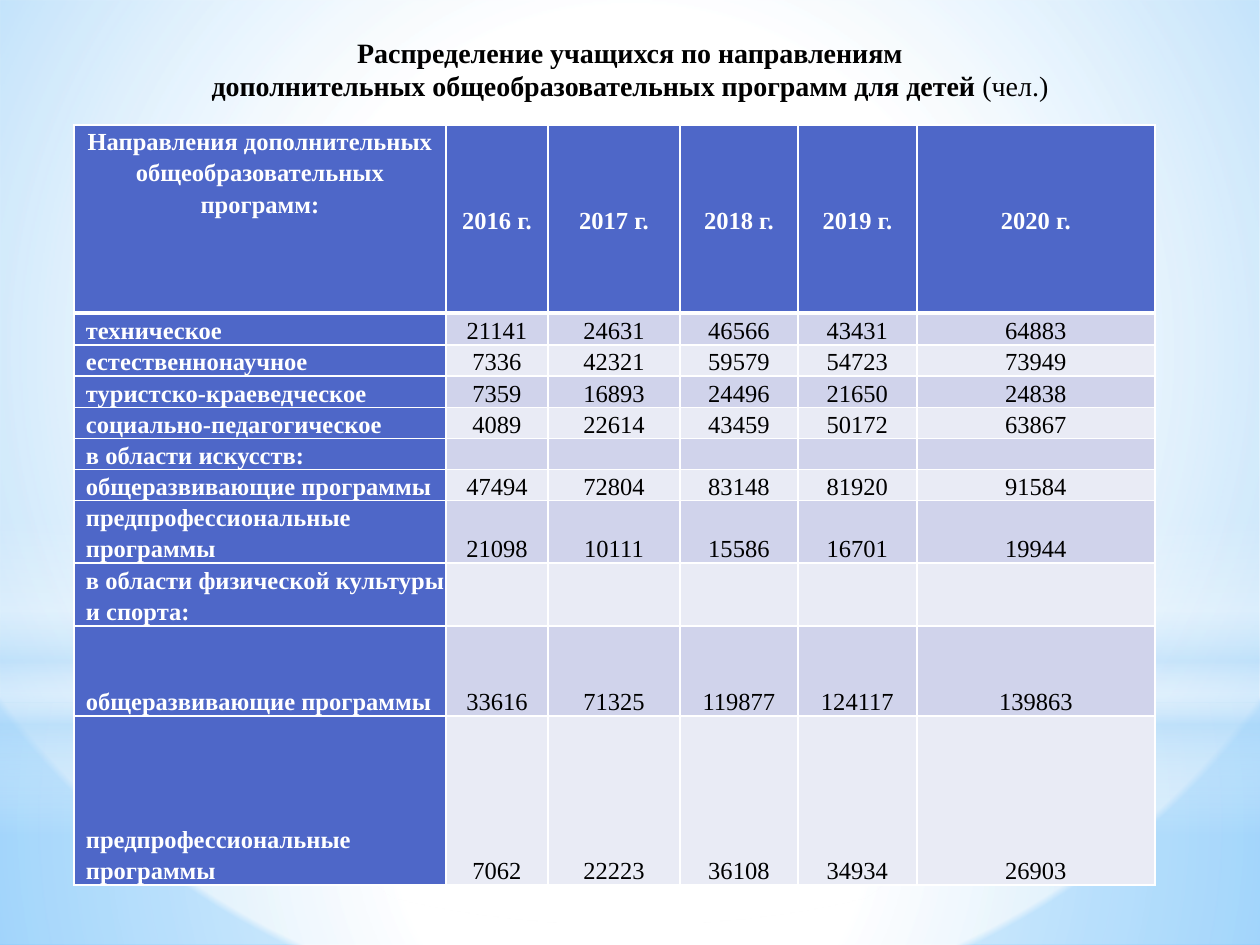
"""Builds a slide with a table of pupils by field of supplementary education."""
from dataclasses import dataclass
from typing import NamedTuple

from lxml import etree
from pptx import Presentation
from pptx import util as u
from pptx.dml.color import RGBColor
from pptx.enum import shapes, text
from pptx.oxml import ns

EMU_PER_PX = 914400 / 126


@dataclass(frozen=True)
class Theme:
    font: str = "Times New Roman"
    title_pt: int = 16
    table_pt: int = 14
    line_spacing: float = 1.15
    ink: str = "000000"
    white: str = "FFFFFF"
    accent: str = "4E67C8"
    bands: tuple[str, str] = ("D0D3EB", "E9EBF5")
    sky: str = "B4DCFA"
    deep_sky: str = "5BB9FF"


class Box(NamedTuple):
    left: int
    top: int
    width: int
    height: int


class Stop(NamedTuple):
    position: int
    color: str
    opacity: int = 100


class Gradient(NamedTuple):
    stops: list[Stop]
    focus: tuple[int, int, int, int] | None = (50, 50, 50, 50)


class Glow(NamedTuple):
    box: Box
    outline: shapes.MSO_SHAPE
    gradient: Gradient


class Program(NamedTuple):
    label: str
    height: int
    pupils: tuple[int, ...] = ()


THEME = Theme()
W, S = THEME.white, THEME.sky
RECT, OVAL = shapes.MSO_SHAPE.RECTANGLE, shapes.MSO_SHAPE.OVAL

BACKGROUND = Gradient([Stop(0, W), Stop(99, W), Stop(100, THEME.deep_sky)], (20, 10, 20, 60))
GLOWS = [
    Glow(Box(0, 703, 1260, 242), RECT, Gradient([Stop(0, W, 91), Stop(37, W, 76), Stop(100, S, 79)])),
    Glow(Box(0, 0, 1260, 703), RECT, Gradient([Stop(0, W, 89), Stop(48, W, 62), Stop(100, S, 79)])),
    Glow(Box(0, 519, 1260, 315), RECT, Gradient([
        Stop(0, W, 0), Stop(29, W, 30), Stop(45, S, 40),
        Stop(55, W, 26), Stop(65, S, 60), Stop(100, W, 0)], None)),
    Glow(Box(0, 220, 1260, 703), OVAL, Gradient([Stop(0, W), Stop(56, W, 0)])),
]

TITLE_BOX = Box(15, 29, 1230, 84)
TITLE = [
    [("Распределение учащихся по направлениям", True)],
    [("дополнительных общеобразовательных программ для детей ", True), ("(чел.)", False)],
]

TABLE_ORIGIN = (74, 125)
COLUMN_WIDTHS = [372, 102, 132, 118, 119, 238]
HEADER_HEIGHT = 188
LABEL_INDENT = 12
HEADER = ["Направления дополнительных общеобразовательных программ:",
          *(f"{year} г." for year in range(2016, 2021))]
PROGRAMS = [
    Program("техническое", 32, (21141, 24631, 46566, 43431, 64883)),
    Program("естественнонаучное", 31, (7336, 42321, 59579, 54723, 73949)),
    Program("туристско-краеведческое", 31, (7359, 16893, 24496, 21650, 24838)),
    Program("социально-педагогическое", 31, (4089, 22614, 43459, 50172, 63867)),
    Program("в области искусств:", 31),
    Program("общеразвивающие программы", 31, (47494, 72804, 83148, 81920, 91584)),
    Program("предпрофессиональные программы", 62, (21098, 10111, 15586, 16701, 19944)),
    Program("в области физической культуры и спорта:", 63),
    Program("общеразвивающие программы", 90, (33616, 71325, 119877, 124117, 139863)),
    Program("предпрофессиональные программы", 169, (7062, 22223, 36108, 34934, 26903)),
]


def px(length: int) -> u.Emu:
    return u.Emu(round(length * EMU_PER_PX))


def set_gradient(fill, element, gradient: Gradient) -> None:
    fill.gradient()
    node = element.find(".//" + ns.qn("a:gradFill"))
    for child in list(node):
        node.remove(child)
    stop_list = etree.SubElement(node, ns.qn("a:gsLst"))
    for stop in gradient.stops:
        mark = etree.SubElement(stop_list, ns.qn("a:gs"), pos=str(stop.position * 1000))
        color = etree.SubElement(mark, ns.qn("a:srgbClr"), val=stop.color)
        etree.SubElement(color, ns.qn("a:alpha"), val=str(stop.opacity * 1000))
    if gradient.focus is None:
        etree.SubElement(node, ns.qn("a:lin"), ang="5400000", scaled="0")
        return
    circle = etree.SubElement(node, ns.qn("a:path"), {"path": "circle"})
    edges = {side: str(value * 1000) for side, value in zip("ltrb", gradient.focus)}
    etree.SubElement(circle, ns.qn("a:fillToRect"), edges)


def draw_glow(slide, glow: Glow) -> None:
    shape = slide.shapes.add_shape(glow.outline, *map(px, glow.box))
    shape.shadow.inherit = False
    shape.line.fill.background()
    set_gradient(shape.fill, shape._element, glow.gradient)


def add_run(paragraph, words: str, size: int, color: str, bold: bool) -> None:
    run = paragraph.add_run()
    run.text = words
    run.font.name = THEME.font
    run.font.size = u.Pt(size)
    run.font.bold = bold
    run.font.color.rgb = RGBColor.from_string(color)


def write_title(slide) -> None:
    title = slide.shapes.title
    title.left, title.top, title.width, title.height = map(px, TITLE_BOX)
    frame = title.text_frame
    frame.auto_size = text.MSO_AUTO_SIZE.NONE
    frame.vertical_anchor = text.MSO_ANCHOR.TOP
    for index, line in enumerate(TITLE):
        paragraph = frame.add_paragraph() if index else frame.paragraphs[0]
        paragraph.alignment = text.PP_ALIGN.CENTER
        for words, bold in line:
            add_run(paragraph, words, THEME.title_pt, THEME.ink, bold)
    slide.shapes._spTree.append(title._element)


def set_borders(cell, top: int, bottom: int) -> None:
    properties = cell._tc.get_or_add_tcPr()
    for index, (side, points) in enumerate(zip("LRTB", (1, 1, top, bottom))):
        line = etree.Element(ns.qn(f"a:ln{side}"), w=str(u.Pt(points)))
        solid = etree.SubElement(line, ns.qn("a:solidFill"))
        etree.SubElement(solid, ns.qn("a:srgbClr"), val=THEME.white)
        properties.insert(index, line)


def fill_cell(cell, words: str, row: int, column: int) -> None:
    is_header, is_label = row == 0, column == 0
    on_accent = is_header or is_label
    cell.margin_left = cell.margin_right = cell.margin_top = cell.margin_bottom = 0
    cell.vertical_anchor = text.MSO_ANCHOR.BOTTOM
    if is_header:
        cell.vertical_anchor = text.MSO_ANCHOR.TOP if is_label else text.MSO_ANCHOR.MIDDLE
    elif is_label:
        cell.margin_left = px(LABEL_INDENT)
    cell.fill.solid()
    cell.fill.fore_color.rgb = RGBColor.from_string(
        THEME.accent if on_accent else THEME.bands[(row - 1) % 2])
    paragraph = cell.text_frame.paragraphs[0]
    paragraph.line_spacing = THEME.line_spacing
    paragraph.alignment = text.PP_ALIGN.LEFT if is_label and not is_header else text.PP_ALIGN.CENTER
    if words:
        add_run(paragraph, words, THEME.table_pt, THEME.white if on_accent else THEME.ink, on_accent)
    else:
        paragraph._p.get_or_add_endParaRPr().set("sz", str(THEME.table_pt * 100))
    set_borders(cell, top=3 if row == 1 else 1, bottom=3 if is_header else 1)


def draw_table(slide) -> None:
    heights = [HEADER_HEIGHT, *(program.height for program in PROGRAMS)]
    box = Box(*TABLE_ORIGIN, sum(COLUMN_WIDTHS), sum(heights))
    table = slide.shapes.add_table(len(heights), len(COLUMN_WIDTHS), *map(px, box)).table
    for column, width in zip(table.columns, COLUMN_WIDTHS):
        column.width = px(width)
    for row, height in zip(table.rows, heights):
        row.height = px(height)
    blank = ("",) * (len(COLUMN_WIDTHS) - 1)
    rows = [HEADER, *([program.label, *(program.pupils or blank)] for program in PROGRAMS)]
    for row, values in enumerate(rows):
        for column, value in enumerate(values):
            fill_cell(table.cell(row, column), str(value), row, column)


def main() -> None:
    deck = Presentation()
    deck.slide_width, deck.slide_height = px(1260), px(945)
    slide = deck.slides.add_slide(deck.slide_layouts.get_by_name("Title Only"))
    set_gradient(slide.background.fill, slide._element, BACKGROUND)
    for glow in GLOWS:
        draw_glow(slide, glow)
    write_title(slide)
    draw_table(slide)
    deck.save("out.pptx")


if __name__ == "__main__":
    main()
